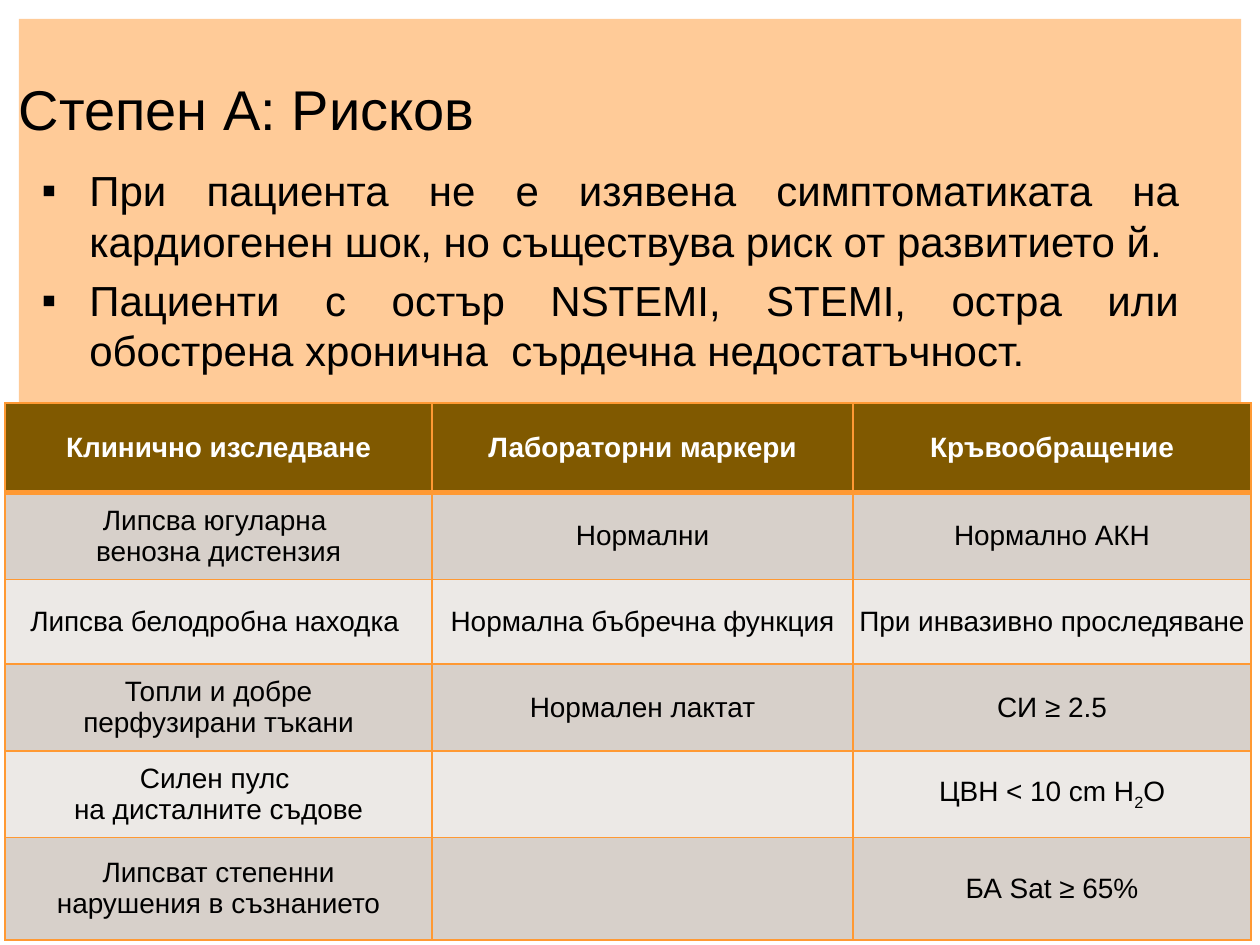
"""Build the slide on risk stage A of cardiogenic shock."""
from lxml.etree import SubElement
from pptx import Presentation
from pptx.dml.color import RGBColor
from pptx.enum.shapes import MSO_SHAPE as Shape
from pptx.enum.text import MSO_ANCHOR as Anchor, PP_ALIGN as Align
from pptx.oxml.ns import qn
from pptx.util import Inches, Pt

ORANGE, BLACK, WHITE = "FF9933", "000000", "FFFFFF"
HEADER, DARK_BAND, LIGHT_BAND = "805900", "D7D0CA", "ECE9E6"


def paint(fill, color):
    fill.solid()
    fill.fore_color.rgb = RGBColor.from_string(color)


def write(frame, text, size, color=BLACK, bold=False, align=Align.LEFT,
          anchor=Anchor.TOP, inset=0.05, gap=0, bullet=None):
    """Write lines into a frame; pieces between tildes become subscripts."""
    frame.word_wrap = True
    frame.vertical_anchor = anchor
    frame.margin_left = frame.margin_right = Inches(inset)
    frame.margin_top = frame.margin_bottom = Inches(inset)
    for number, line in enumerate(text.split("\n")):
        para = frame.add_paragraph() if number else frame.paragraphs[0]
        para.alignment = align
        para.space_before = Pt(gap if number else 0)
        if bullet:
            props = para._p.get_or_add_pPr()
            props.set("marL", str(Inches(0.38)))
            props.set("indent", str(Inches(-0.38)))
            SubElement(props, qn("a:buFont"), typeface="Arial")
            SubElement(props, qn("a:buChar"), char=bullet)
        for index, piece in enumerate(line.split("~")):
            span = para.add_run()
            span.text = piece
            span.font.name = "Arial"
            span.font.size = Pt(size)
            span.font.bold = bold
            span.font.color.rgb = RGBColor.from_string(color)
            if index % 2:
                span._r.get_or_add_rPr().set("baseline", "-25000")


deck = Presentation()
deck.slide_width, deck.slide_height = Inches(10), Inches(7.5)
page = deck.slides.add_slide(deck.slide_layouts[6])
paint(page.background.fill, WHITE)

panel = page.shapes.add_shape(
    Shape.RECTANGLE, Inches(0.15), Inches(0.15), Inches(9.7), Inches(7.2))
panel.shadow.inherit = False
panel.line.fill.background()
paint(panel.fill, ORANGE)
panel_color = panel._element.spPr.find(qn("a:solidFill"))[0]
SubElement(panel_color, qn("a:alpha"), val="50000")

title = page.shapes.add_textbox(
    Inches(0.1), Inches(0.13), Inches(8.62), Inches(1.45))
write(title.text_frame, "Степен А: Рисков", size=32, anchor=Anchor.MIDDLE)

body = page.shapes.add_textbox(
    Inches(0.28), Inches(1.26), Inches(9.13), Inches(3.41))
write(body.text_frame,
      "При пациента не е изявена симптоматиката на кардиогенен шок, "
      "но съществува риск от развитието й.\n"
      "Пациенти с остър NSTEMI, STEMI, остра или обострена хронична  "
      "сърдечна недостатъчност.",
      size=24, align=Align.JUSTIFY, gap=5, bullet="▪")

rows = [
    ("Клинично изследване", "Лабораторни маркери", "Кръвообращение"),
    ("Липсва югуларна \nвенозна дистензия", "Нормални", "Нормално АКН"),
    ("Липсва белодробна находка ", "Нормална бъбречна функция",
     "При инвазивно проследяване"),
    ("Топли и добре\nперфузирани тъкани", "Нормален лактат", "СИ ≥ 2.5"),
    ("Силен пулс \nна дисталните съдове", "", "ЦВН < 10 cm H~2~O"),
    ("Липсват степенни\nнарушения в съзнанието", "", "БА Sat ≥ 65%"),
]
widths = [3.39, 3.34, 3.16]
heights = [0.71, 0.69, 0.67, 0.69, 0.69, 0.81]
table = page.shapes.add_table(
    len(rows), len(widths), Inches(0.04), Inches(3.2),
    Inches(sum(widths)), Inches(sum(heights))).table
for column, width in zip(table.columns, widths):
    column.width = Inches(width)
for row, height in zip(table.rows, heights):
    row.height = Inches(height)

for row_number, texts in enumerate(rows):
    is_header = row_number == 0
    band = HEADER if is_header else DARK_BAND if row_number % 2 else LIGHT_BAND
    for column_number, text in enumerate(texts):
        cell = table.cell(row_number, column_number)
        props = cell._tc.get_or_add_tcPr()
        for side in "LRTB":
            thick = (is_header and side == "B") or (row_number == 1 and side == "T")
            border = SubElement(props, qn(f"a:ln{side}"), w=str(Pt(3 if thick else 1)))
            border_fill = SubElement(border, qn("a:solidFill"))
            SubElement(border_fill, qn("a:srgbClr"), val=ORANGE)
        paint(cell.fill, band)
        cell.vertical_anchor = Anchor.MIDDLE
        cell.margin_left = cell.margin_right = 0
        cell.margin_top = cell.margin_bottom = 0
        if text:
            write(cell.text_frame, text, size=16, bold=is_header, inset=0,
                  color=WHITE if is_header else BLACK, align=Align.CENTER)

deck.save("out.pptx")
